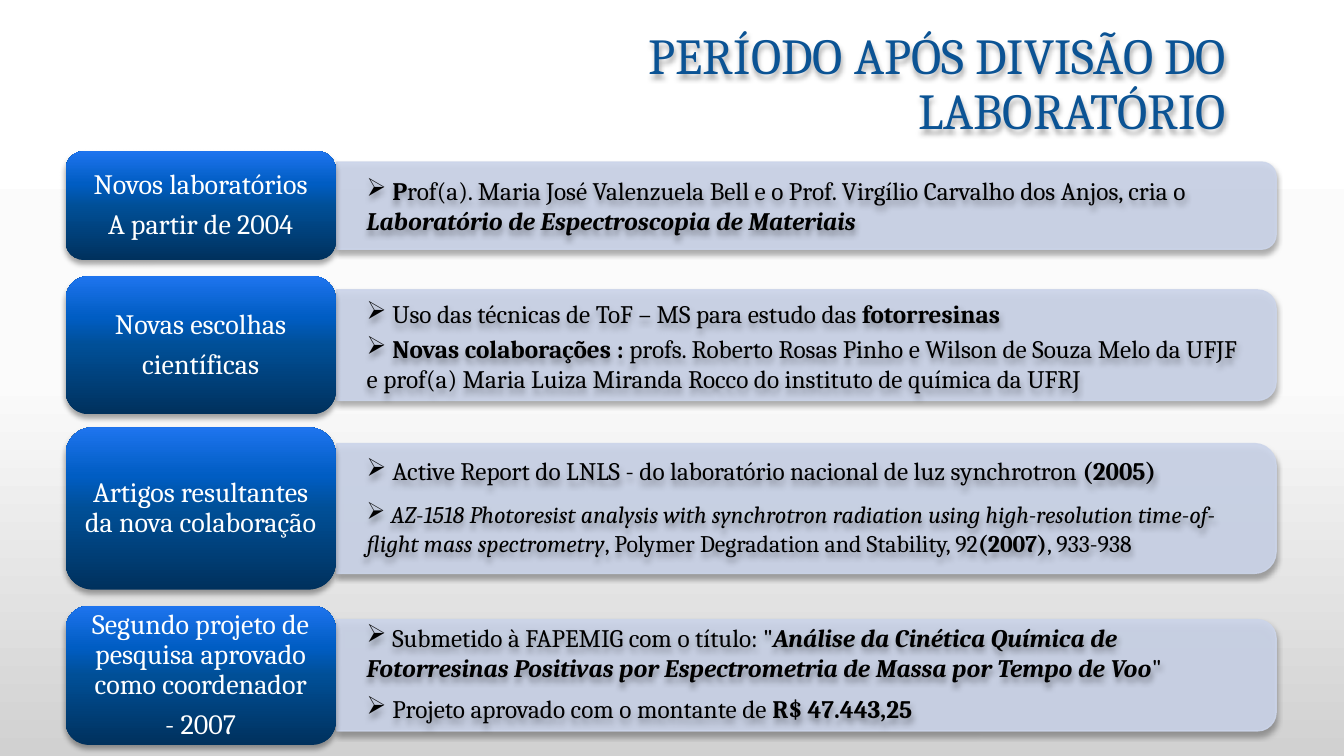
from dataclasses import dataclass
from typing import NamedTuple

from lxml.etree import SubElement
from pptx import Presentation
from pptx.dml.color import RGBColor
from pptx.enum.shapes import MSO_SHAPE
from pptx.enum.text import MSO_ANCHOR, MSO_AUTO_SIZE, PP_ALIGN
from pptx.oxml.ns import qn
from pptx.util import Inches, Pt

WIDE, HIGH = Inches(13.33), Inches(7.5)


@dataclass(frozen=True)
class Theme:
    font: str = "Cambria"
    title: str = "0B5394"
    label: str = "FFFFFF"
    body: str = "000000"
    panel: str = "CCD5EA"
    shade: str = "000000"
    blue: tuple = ((0, "00315D"), (50, "004F97"), (70, "005DC3"), (100, "1E74EE"))
    back: tuple = ((0, "FFFFFF"), (50, "FBFBFB"), (100, "D1D1D1"))
    head_pt: int = 36
    label_pt: int = 20
    body_pt: int = 18


class Run(NamedTuple):
    text: str
    bold: bool = False
    ital: bool = False


class Note(NamedTuple):
    top: float
    high: float
    runs: tuple
    size: int = Theme.body_pt


class Band(NamedTuple):
    top: float
    high: float
    label: tuple
    notes: tuple


LOOK = Theme()

# Columns and rows, in hundredths of the slide's width and height
LABEL_X, LABEL_W = 4.88, 20.1
PANEL_X, PANEL_W = 25.05, 69.9
NOTE_X, NOTE_W = 26.55, 67.35
ONE, TWO = 5.33, 9.47
PANEL_SHARE = 0.8

BANDS = (
    Band(20, 14.4, ("Novos laboratórios", "A partir de 2004"), (
        Note(22.53, TWO, (
            Run(" P", True),
            Run("rof(a). Maria José Valenzuela Bell e o Prof. Virgílio Carvalho dos Anjos, cria o "),
            Run("Laboratório de Espectroscopia de Materiais", True, True))),
    )),
    Band(36.53, 18.27, ("Novas escolhas", "científicas"), (
        Note(38.8, ONE, (
            Run(" Uso das técnicas de ToF – MS para estudo das "),
            Run("fotorresinas", True))),
        Note(43.47, TWO, (
            Run(" Novas colaborações :", True),
            Run(" profs. Roberto Rosas Pinho e Wilson de Souza Melo da UFJF e prof(a) "
                "Maria Luiza Miranda Rocco do instituto de química da UFRJ"))),
    )),
    Band(56.53, 21.47, ("Artigos resultantes da nova colaboração",), (
        Note(59.6, ONE, (
            Run(" Active Report do LNLS - do laboratório nacional de luz synchrotron "),
            Run("(2005)", True))),
        Note(65.47, 8.93, (
            Run(" AZ-1518 Photoresist analysis with synchrotron radiation using "
                "high-resolution time-of-flight mass spectrometry", ital=True),
            Run(", Polymer Degradation and Stability, 92"),
            Run("(2007)", True),
            Run(", 933-938")), 17),
    )),
    Band(80.13, 18.4, ("Segundo projeto de pesquisa aprovado como coordenador", "- 2007"), (
        Note(81.6, TWO, (
            Run(' Submetido à FAPEMIG com o título: "'),
            Run("Análise da Cinética Química de Fotorresinas Positivas por "
                "Espectrometria de Massa por Tempo de Voo", True, True),
            Run('"'))),
        Note(91.07, ONE, (
            Run(" Projeto aprovado com o montante de "),
            Run("R$ 47.443,25", True))),
    )),
)


def col(part: float) -> int:
    return round(WIDE * part / 100)


def row(part: float) -> int:
    return round(HIGH * part / 100)


def blend(item, fill, stops: tuple, angle: int) -> None:
    """Fill with a gradient of any number of stops."""
    fill.gradient()
    fill.gradient_angle = angle
    group = item.element.find(".//" + qn("a:gsLst"))
    group.clear()
    for place, tone in stops:
        stop = SubElement(group, qn("a:gs"), pos=str(place * 1000))
        SubElement(stop, qn("a:srgbClr"), val=tone)


def shadow(shape) -> None:
    shape.shadow.inherit = False
    group = shape.element.find(".//" + qn("a:effectLst"))
    drop = SubElement(group, qn("a:outerShdw"), blurRad=str(Pt(4)), dist=str(Pt(3)),
                      dir="5400000", algn="ctr", rotWithShape="0")
    tone = SubElement(drop, qn("a:srgbClr"), val=LOOK.shade)
    SubElement(tone, qn("a:alpha"), val="35000")


def write(para, runs: tuple, size: int, tone: str) -> None:
    for part in runs:
        run = para.add_run()
        run.text = part.text
        font = run.font
        font.name, font.size = LOOK.font, Pt(size)
        font.bold, font.italic = part.bold, part.ital
        font.color.rgb = RGBColor.from_string(tone)


def textbox(slide, left: float, top: float, wide: float, high: float):
    box = slide.shapes.add_textbox(col(left), row(top), col(wide), row(high))
    box.text_frame.word_wrap = True
    shadow(box)
    return box.text_frame


def draw_title(slide) -> None:
    para = textbox(slide, 46.66, 3.47, 45.31, 16.53).paragraphs[0]
    para.alignment, para.line_spacing = PP_ALIGN.RIGHT, 0.9
    write(para, (Run("PERÍODO APÓS DIVISÃO DO LABORATÓRIO"),), LOOK.head_pt, LOOK.title)


def draw_panel(slide, band: Band) -> None:
    # Turned a quarter, so its length is set as its height
    thick, length = row(band.high * PANEL_SHARE), col(PANEL_W)
    mid_x = col(PANEL_X + PANEL_W / 2)
    mid_y = row(band.top + band.high / 2)
    panel = slide.shapes.add_shape(MSO_SHAPE.ROUND_2_SAME_RECTANGLE, mid_x - thick // 2,
                                   mid_y - length // 2, thick, length)
    panel.rotation = 90
    panel.line.width = Pt(1)
    for fill in (panel.fill, panel.line.fill):
        fill.solid()
        fill.fore_color.rgb = RGBColor.from_string(LOOK.panel)
    for tone in panel.element.iter(qn("a:srgbClr")):
        SubElement(tone, qn("a:alpha"), val="90000")
    shadow(panel)


def draw_label(slide, band: Band) -> None:
    label = slide.shapes.add_shape(MSO_SHAPE.ROUNDED_RECTANGLE, col(LABEL_X), row(band.top),
                                   col(LABEL_W), row(band.high))
    blend(label, label.fill, LOOK.blue, 90)
    label.line.fill.background()
    shadow(label)
    frame = label.text_frame
    frame.word_wrap, frame.vertical_anchor = True, MSO_ANCHOR.MIDDLE
    frame.margin_left = frame.margin_right = Inches(0.08)
    frame.margin_top = frame.margin_bottom = Inches(0.04)
    for spot, text in enumerate(band.label):
        para = frame.add_paragraph() if spot else frame.paragraphs[0]
        para.alignment, para.line_spacing = PP_ALIGN.CENTER, 0.9
        para.space_after = Pt(7)
        write(para, (Run(text),), LOOK.label_pt, LOOK.label)


def draw_note(slide, note: Note) -> None:
    frame = textbox(slide, NOTE_X, note.top, NOTE_W, note.high)
    frame.auto_size = MSO_AUTO_SIZE.SHAPE_TO_FIT_TEXT
    para = frame.paragraphs[0]
    SubElement(para._p.get_or_add_pPr(), qn("a:buChar"), char="➢")
    write(para, note.runs, note.size, LOOK.body)


def main() -> None:
    deck = Presentation()
    deck.slide_width, deck.slide_height = WIDE, HIGH
    slide = deck.slides.add_slide(deck.slide_layouts[6])
    # Background and title
    blend(slide, slide.background.fill, LOOK.back, 270)
    draw_title(slide)
    # Bands, then their notes on top
    for band in BANDS:
        draw_panel(slide, band)
        draw_label(slide, band)
    for band in BANDS:
        for note in band.notes:
            draw_note(slide, note)
    deck.save("out.pptx")


if __name__ == "__main__":
    main()
